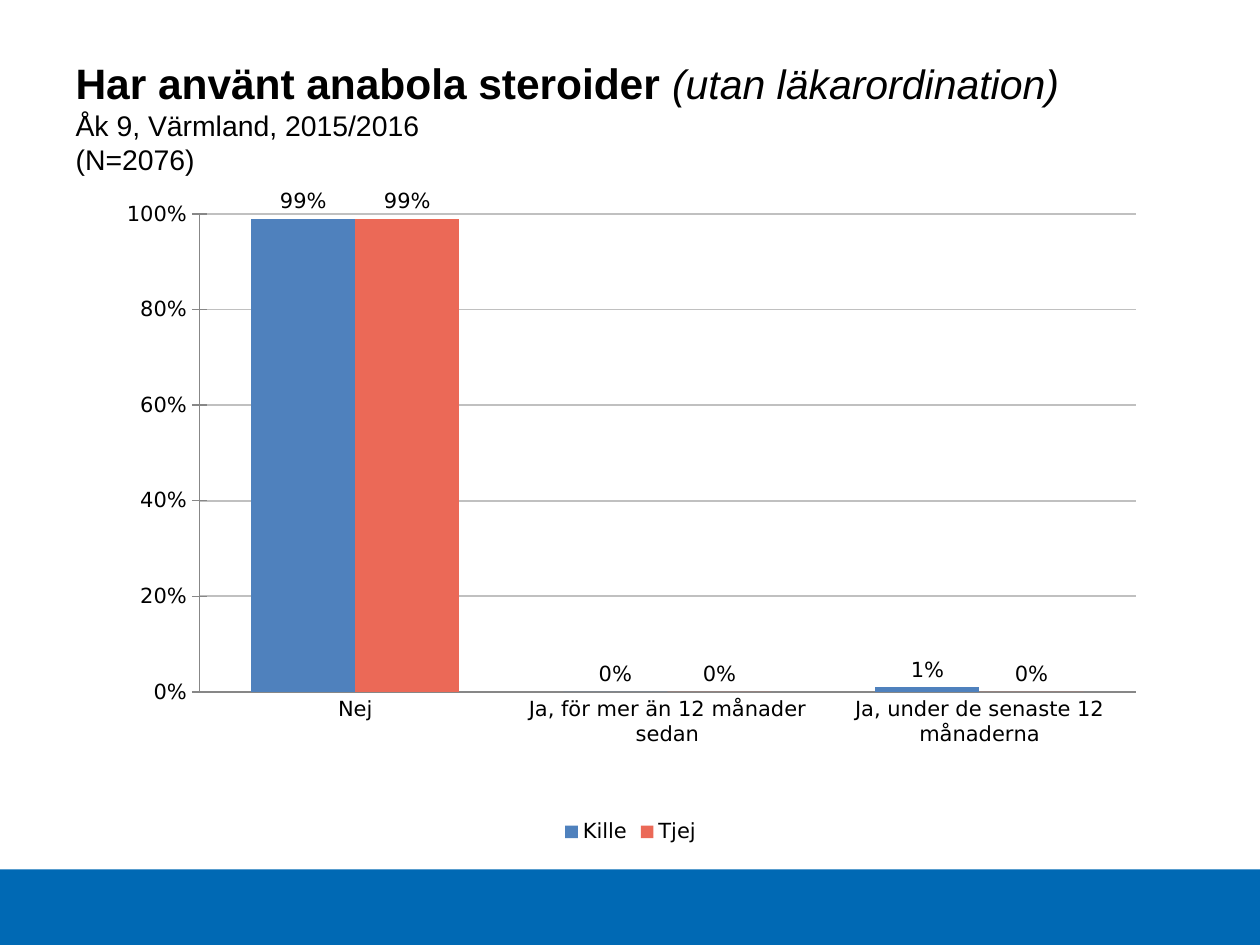
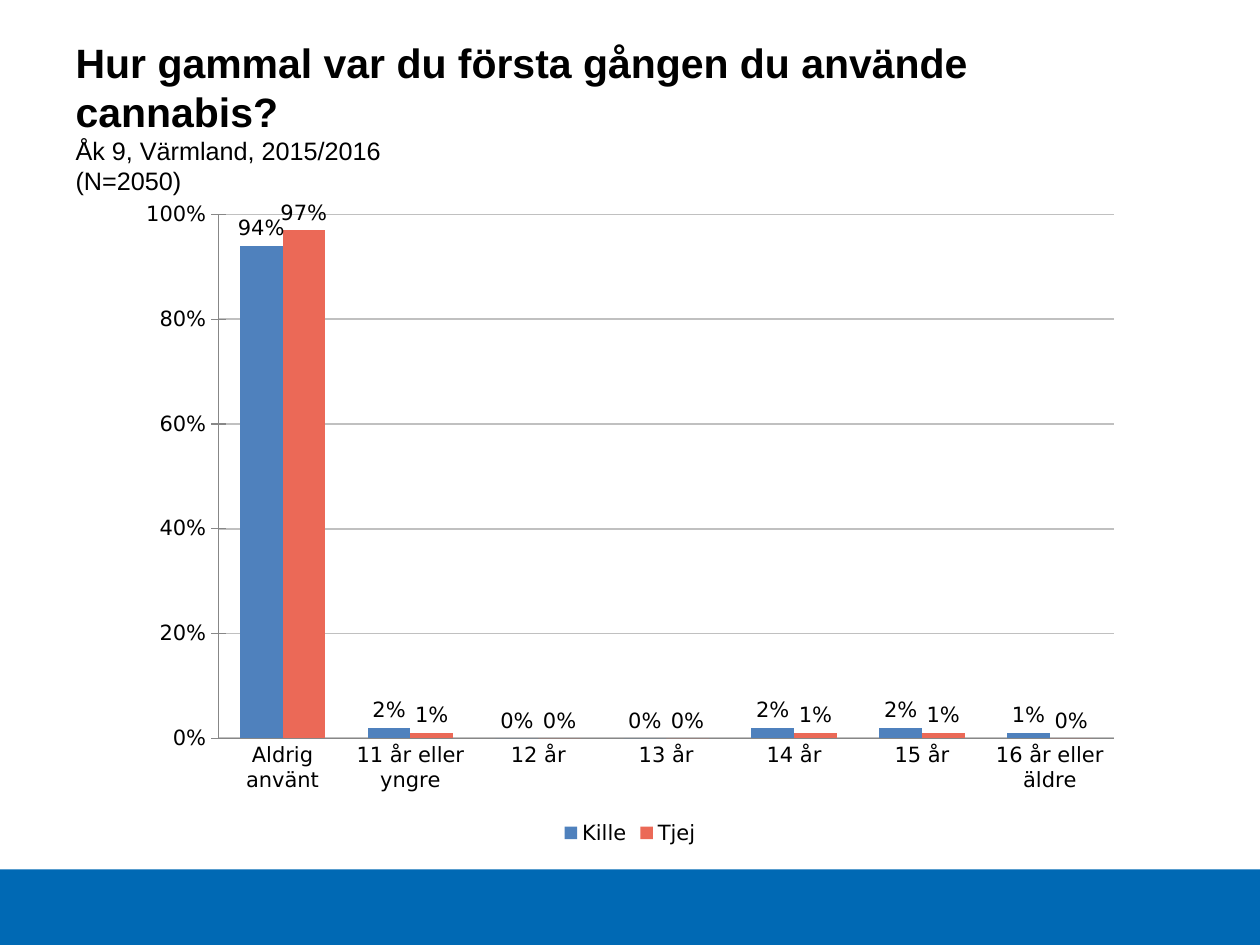
"""Build two slides with survey charts on steroid and cannabis use in year 9."""
from lxml.etree import SubElement
from pptx import Presentation
from pptx.chart.data import CategoryChartData
from pptx.dml.color import RGBColor
from pptx.enum.chart import XL_CHART_TYPE, XL_LABEL_POSITION, XL_LEGEND_POSITION, XL_TICK_MARK
from pptx.enum.shapes import MSO_SHAPE
from pptx.enum.text import MSO_ANCHOR, MSO_AUTO_SIZE, PP_ALIGN
from pptx.oxml.ns import qn
from pptx.util import Inches, Pt

BLACK = RGBColor(0x00, 0x00, 0x00)
BAND = RGBColor(0x00, 0x69, 0xB4)
GRID = RGBColor(0xC0, 0xC0, 0xC0)
AXIS = RGBColor(0x87, 0x87, 0x87)
SERIES_COLORS = {"Kille": RGBColor(0x4F, 0x81, 0xBD), "Tjej": RGBColor(0xEB, 0x69, 0x57)}
TITLE_FONT, CHART_FONT = "Arial", "DejaVu Sans"

SLIDES = [
    {
        "title": [
            [("Har använt anabola steroider ", 24.3, True, False),
             ("(utan läkarordination)", 23.4, False, True)],
            [("Åk 9, Värmland, 2015/2016", 16.2, False, False)],
            [("(N=2076)", 16.2, False, False)],
        ],
        "box": (8.3, 20, 83.5, 69.87),
        "plot": {"x": 0.09, "y": 0.03, "w": 0.89, "h": 0.73},
        "cats": ["Nej", "Ja, för mer än 12 månader sedan", "Ja, under de senaste 12 månaderna"],
        "vals": {"Kille": (0.99, 0, 0.01), "Tjej": (0.99, 0, 0)},
    },
    {
        "title": [
            [("Hur gammal var du första gången du använde cannabis?", 23.4, True, False)],
            [("Åk 9, Värmland, 2015/2016", 14.4, False, False)],
            [("(N=2050)", 14.4, False, False)],
        ],
        "box": (10, 20, 80, 70),
        "plot": None,
        "cats": ["Aldrig använt", "11 år eller yngre", "12 år", "13 år", "14 år", "15 år",
                 "16 år eller äldre"],
        "vals": {"Kille": (0.94, 0.02, 0, 0, 0.02, 0.02, 0.01),
                 "Tjej": (0.97, 0.01, 0, 0, 0.01, 0.01, 0)},
    },
]

prs = Presentation()
prs.slide_width, prs.slide_height = Inches(10), Inches(7.5)


def place(x, y, w, h):
    """Turn percentages of the slide into left, top, width and height."""
    W, H = prs.slide_width, prs.slide_height
    return [int(share * size / 100) for share, size in zip((x, y, w, h), (W, H, W, H))]


layout = prs.slide_layouts[5]
title, *footers = layout.placeholders
title.left, title.top, title.width, title.height = place(5, 4, 86.6, 16.67)
for ph in footers:
    layout.shapes.element.remove(ph.element)

for number, data in enumerate(SLIDES):
    s = prs.slides.add_slide(layout)
    if number == 0:
        band = s.shapes.add_shape(MSO_SHAPE.RECTANGLE, *place(0, 92, 100, 8))
        band.shadow.inherit = False
        band.fill.solid()
        band.fill.fore_color.rgb = BAND
        band.line.fill.background()
        layout.shapes.element.insert(2, band.element)

    tf = s.shapes.title.text_frame
    tf.word_wrap = True
    tf.auto_size = MSO_AUTO_SIZE.NONE
    tf.vertical_anchor = MSO_ANCHOR.MIDDLE
    p = tf.paragraphs[0]
    p.alignment = PP_ALIGN.LEFT
    for i, line in enumerate(data["title"]):
        if i:
            p.add_line_break()
        for text, size, bold, italic in line:
            r = p.add_run()
            r.text = text
            r.font.name, r.font.size = TITLE_FONT, Pt(size)
            r.font.bold, r.font.italic = bold, italic
            r.font.color.rgb = BLACK

    cd = CategoryChartData(number_format="0%")
    cd.categories = data["cats"]
    for name, vals in data["vals"].items():
        cd.add_series(name, vals)
    chart = s.shapes.add_chart(XL_CHART_TYPE.COLUMN_CLUSTERED, *place(*data["box"]), cd).chart
    chart.has_title = False
    chart.font.name, chart.font.size = CHART_FONT, Pt(12)
    chart.font.color.rgb = BLACK
    chart.has_legend = True
    chart.legend.position = XL_LEGEND_POSITION.BOTTOM
    chart.legend.include_in_layout = False

    cat_axis, val_axis = chart.category_axis, chart.value_axis
    cat_axis.major_tick_mark = XL_TICK_MARK.NONE
    val_axis.major_tick_mark = XL_TICK_MARK.CROSS
    val_axis.minimum_scale, val_axis.maximum_scale, val_axis.major_unit = 0, 1, 0.2
    val_axis.tick_labels.number_format = "0%"
    val_axis.tick_labels.number_format_is_linked = False
    val_axis.major_gridlines.format.line.color.rgb = GRID
    val_axis.major_gridlines.format.line.width = Pt(1)
    for axis in (cat_axis, val_axis):
        axis.format.line.color.rgb = AXIS

    plot = chart.plots[0]
    plot.gap_width = 100
    plot.vary_by_categories = False
    for series in plot.series:
        series.format.fill.solid()
        series.format.fill.fore_color.rgb = SERIES_COLORS[series.name]
        labels = series.data_labels
        labels.show_value = True
        labels.number_format, labels.number_format_is_linked = "0%", False
        labels.position = XL_LABEL_POSITION.OUTSIDE_END

    if data["plot"]:
        area = chart.element.find(".//" + qn("c:plotArea"))
        for old in area.findall(qn("c:layout")):
            area.remove(old)
        frame = SubElement(area, qn("c:layout"))
        area.insert(0, frame)
        manual = SubElement(frame, qn("c:manualLayout"))
        settings = {"layoutTarget": "inner", "xMode": "edge", "yMode": "edge", **data["plot"]}
        for tag, val in settings.items():
            SubElement(manual, qn("c:" + tag)).set("val", str(val))

prs.save("out.pptx")
